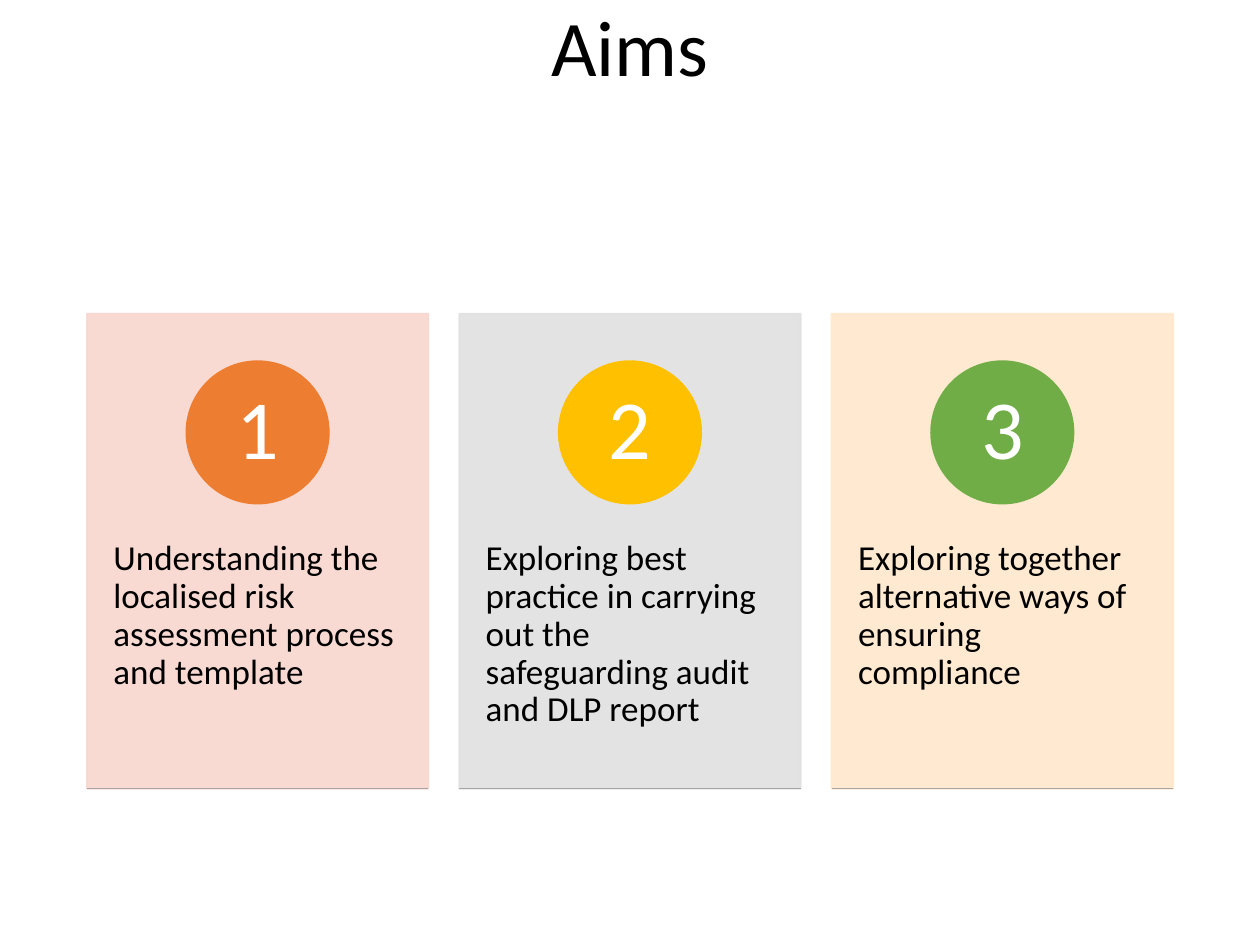
from lxml.etree import SubElement
from pptx import Presentation
from pptx.dml.color import RGBColor
from pptx.enum.shapes import MSO_CONNECTOR, MSO_SHAPE
from pptx.enum.text import MSO_ANCHOR, PP_ALIGN
from pptx.oxml.ns import qn
from pptx.util import Inches, Pt

# Content: text, card colour, circle colour
TITLE = "Aims"
AIMS = [
    ("Understanding the localised risk assessment process and template", "F8D7CE", "ED7D31"),
    ("Exploring best practice in carrying out the safeguarding audit and DLP report",
     "E1E1E1", "FFC000"),
    ("Exploring together alternative ways of ensuring compliance", "FFE8CC", "70AD47"),
]

THEME = {
    "font": "Calibri", "background": "FFFFFF", "text": "000000", "number": "FFFFFF",
    "rule": "A5A5A5", "title_size": 45, "number_size": 48, "body_size": 20,
    "line": 1, "rule_line": 0.5, "card_alpha": 90,
}

# Grid, in inches
SLIDE_WIDTH, SLIDE_HEIGHT = 10, 7.5
MARGIN = 0.69
CONTENT_WIDTH = SLIDE_WIDTH - 2 * MARGIN
TITLE_TOP, TITLE_HEIGHT = 0.07, 0.69
CARD_TOP, CARD_WIDTH, CARD_HEIGHT = 2.49, 2.71, 3.77
CARD_PITCH = (CONTENT_WIDTH - CARD_WIDTH) / (len(AIMS) - 1)
CIRCLE_SIZE = 1.13
CIRCLE_TOP = CARD_TOP + CARD_HEIGHT / 10
BODY_INSETS = (0.21, 1.8, 0.21, 0.36)
NUMBER_INSETS = (0.09, 0.01, 0.09, 0.01)


def color(name):
    return RGBColor.from_string(THEME.get(name, name))


def write(shape, text, size, font_color, alignment, anchor, insets):
    frame = shape.text_frame
    frame.text = text
    frame.word_wrap = True
    frame.vertical_anchor = anchor
    (frame.margin_left, frame.margin_top,
     frame.margin_right, frame.margin_bottom) = map(Inches, insets)
    paragraph = frame.paragraphs[0]
    paragraph.alignment = alignment
    paragraph.line_spacing = 0.9
    font = paragraph.runs[0].font
    font.name, font.size = THEME["font"], Pt(THEME[size])
    font.color.rgb = color(font_color)


def add_block(slide, kind, box, fill, alpha=100):
    shape = slide.shapes.add_shape(kind, *map(Inches, box))
    shape.shadow.inherit = False
    shape.fill.solid()
    shape.fill.fore_color.rgb = color(fill)
    shape.line.fill.solid()
    shape.line.color.rgb = color(fill)
    shape.line.width = Pt(THEME["line"])
    if alpha < 100:
        for node in shape.element.spPr.iter(qn("a:srgbClr")):
            SubElement(node, qn("a:alpha"), val=str(alpha * 1000))
    return shape


def add_rule(slide, left, top, width):
    rule = slide.shapes.add_connector(
        MSO_CONNECTOR.STRAIGHT, *map(Inches, (left, top, left + width, top)))
    rule.line.color.rgb = color("rule")
    rule.line.width = Pt(THEME["rule_line"])
    SubElement(rule.element.spPr, qn("a:effectLst"))


def add_card(slide, index, text, card_color, circle_color):
    left = MARGIN + index * CARD_PITCH
    card = add_block(slide, MSO_SHAPE.RECTANGLE, (left, CARD_TOP, CARD_WIDTH, CARD_HEIGHT),
                     card_color, THEME["card_alpha"])
    write(card, text, "body_size", "text", PP_ALIGN.LEFT, MSO_ANCHOR.TOP, BODY_INSETS)

    # Numbered circle, centred across the card
    circle_left = left + (CARD_WIDTH - CIRCLE_SIZE) / 2
    circle = add_block(slide, MSO_SHAPE.OVAL,
                       (circle_left, CIRCLE_TOP, CIRCLE_SIZE, CIRCLE_SIZE), circle_color)
    write(circle, str(index + 1), "number_size", "number", PP_ALIGN.CENTER,
          MSO_ANCHOR.MIDDLE, NUMBER_INSETS)

    add_rule(slide, left, CARD_TOP + CARD_HEIGHT, CARD_WIDTH)


def main():
    presentation = Presentation()
    presentation.slide_width = Inches(SLIDE_WIDTH)
    presentation.slide_height = Inches(SLIDE_HEIGHT)
    slide = presentation.slides.add_slide(presentation.slide_layouts[6])
    slide.background.fill.solid()
    slide.background.fill.fore_color.rgb = color("background")

    # Title
    title = slide.shapes.add_textbox(
        *map(Inches, (MARGIN, TITLE_TOP, CONTENT_WIDTH, TITLE_HEIGHT)))
    write(title, TITLE, "title_size", "text", PP_ALIGN.CENTER, MSO_ANCHOR.TOP, (0, 0, 0, 0))

    # Cards
    for index, aim in enumerate(AIMS):
        add_card(slide, index, *aim)

    presentation.save("out.pptx")


if __name__ == "__main__":
    main()
